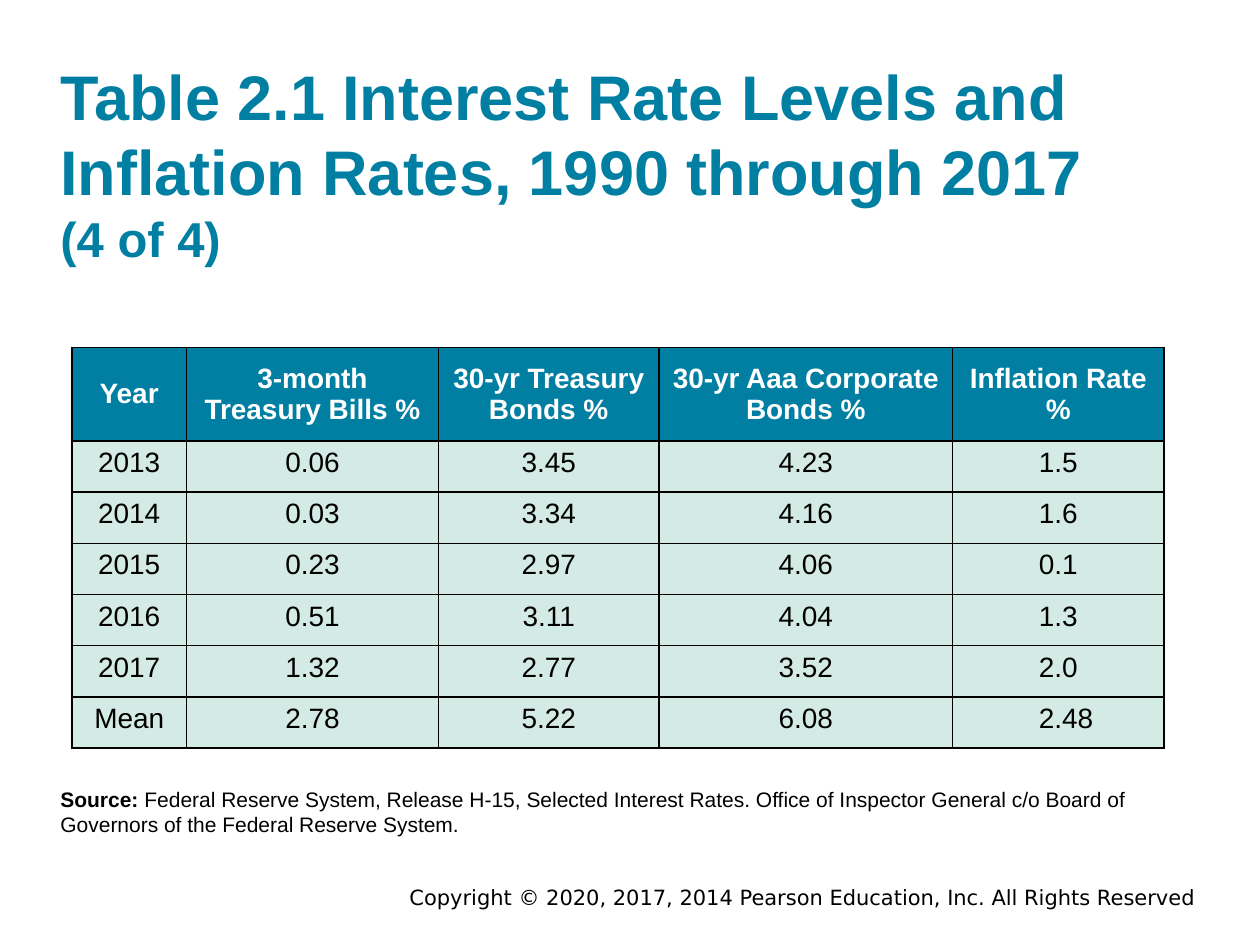
from lxml.etree import SubElement as Sub
from pptx import Presentation
from pptx.dml.color import RGBColor as Rgb
from pptx.enum.text import MSO_ANCHOR as Anchor, PP_ALIGN as Align
from pptx.oxml.ns import qn
from pptx.util import Inches, Pt

COLS, ROWS = 100, 75
UNIT = Inches(0.1)
HUES = {"teal": "007FA3", "mint": "D4EAE4", "white": "FFFFFF", "black": "000000"}
WIDTHS = [9.1, 20, 17.5, 23.3, 16.8]
HEAD, TOTAL = 7.4, 31.8
DATA = [
    ["Year", "3-month Treasury Bills %", "30-yr Treasury Bonds %",
     "30-yr Aaa Corporate Bonds %", "Inflation Rate %"],
    ["2013", "0.06", "3.45", "4.23", "1.5"],
    ["2014", "0.03", "3.34", "4.16", "1.6"],
    ["2015", "0.23", "2.97", "4.06", "0.1"],
    ["2016", "0.51", "3.11", "4.04", "1.3"],
    ["2017", "1.32", "2.77", "3.52", "2.0"],
    ["Mean", "2.78", "5.22", "6.08", "2.48"],
]


def grid(*nums):
    return [round(n * UNIT) for n in nums]


def style(font, size, hue, bold=None, face="Arial"):
    font.name, font.size, font.bold = face, Pt(size), bold
    font.color.rgb = Rgb.from_string(HUES[hue])


def add_text(slide, area, runs, hue, face="Arial", align=Align.LEFT,
             anchor=Anchor.TOP, inset=True):
    frame = slide.shapes.add_textbox(*grid(*area)).text_frame
    frame.word_wrap = True
    frame.vertical_anchor = anchor
    if not inset:
        frame.margin_left = frame.margin_right = 0
        frame.margin_top = frame.margin_bottom = 0
    para = frame.paragraphs[0]
    para.alignment = align
    for text, size, bold in runs:
        run = para.add_run()
        run.text = text
        style(run.font, size, hue, bold, face)


def add_edges(cell):
    props = cell._tc.get_or_add_tcPr()
    for spot, side in enumerate("LRTB"):
        line = Sub(props, qn(f"a:ln{side}"), w=str(Pt(1)))
        fill = Sub(line, qn("a:solidFill"))
        Sub(fill, qn("a:srgbClr"), val=HUES["black"])
        props.remove(line)
        props.insert(spot, line)


def fill_cell(cell, text, head):
    cell.text = text
    cell.vertical_anchor = Anchor.MIDDLE if head else Anchor.TOP
    cell.fill.solid()
    cell.fill.fore_color.rgb = Rgb.from_string(HUES["teal" if head else "mint"])
    para = cell.text_frame.paragraphs[0]
    para.alignment = Align.CENTER
    style(para.font, 16, "white" if head else "black", head)
    add_edges(cell)


def add_rates(slide, left, top):
    area = grid(left, top, sum(WIDTHS), TOTAL)
    table = slide.shapes.add_table(len(DATA), len(WIDTHS), *area).table
    for col, width in zip(table.columns, WIDTHS):
        col.width = round(width * UNIT)
    body = (TOTAL - HEAD) / (len(DATA) - 1)
    for r, row in enumerate(DATA):
        table.rows[r].height = round((body if r else HEAD) * UNIT)
        for c, text in enumerate(row):
            fill_cell(table.cell(r, c), text, r == 0)
    table.cell(len(DATA) - 1, len(WIDTHS) - 1).margin_left = Inches(0.22)


def main():
    deck = Presentation()
    deck.slide_width, deck.slide_height = grid(COLS, ROWS)
    slide = deck.slides.add_slide(deck.slide_layouts[6])
    add_text(slide, (17.6, 69.7, 78.3, 3),
             [("Copyright © 2020, 2017, 2014 Pearson Education, Inc. All Rights Reserved", 12, False)],
             "black", "DejaVu Sans", Align.RIGHT)
    add_text(slide, (4.8, 4.4, 84.3, 16.8),
             [("Table 2.1 Interest Rate Levels and Inflation Rates, 1990 through 2017 ", 36, True),
              ("(4 of 4)", 28, True)],
             "teal", anchor=Anchor.BOTTOM, inset=False)
    add_rates(slide, 5.7, 27.6)
    add_text(slide, (4.8, 62.4, 89.4, 4),
             [("Source: ", 12, True),
              ("Federal Reserve System, Release H-15, Selected Interest Rates. Office of Inspector "
               "General c/o Board of Governors of the Federal Reserve System.", 12, False)],
             "black", inset=False)
    deck.save("out.pptx")


if __name__ == "__main__":
    main()
